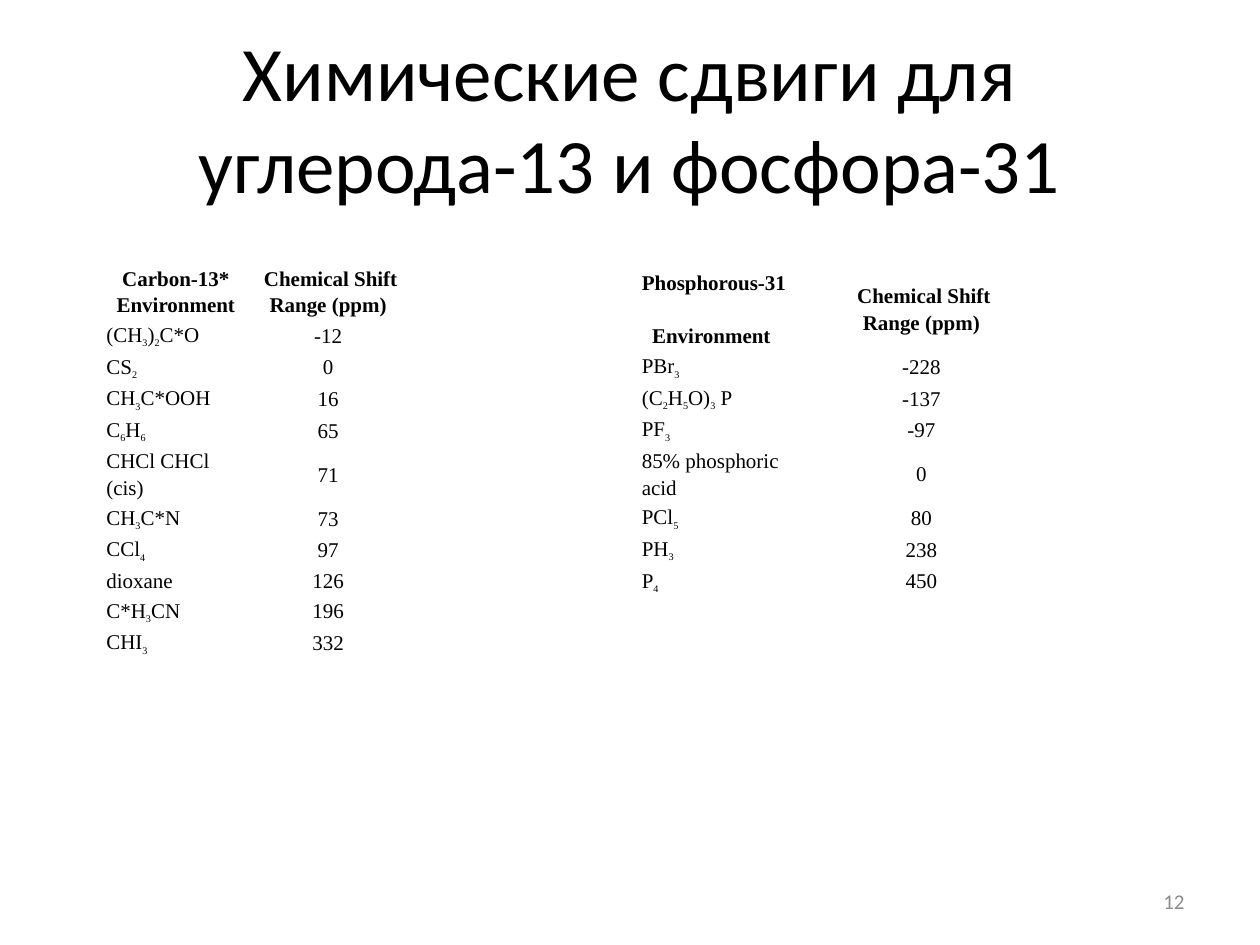
from dataclasses import dataclass

from pptx import Presentation
from pptx.dml.color import RGBColor
from pptx.enum.text import MSO_ANCHOR, PP_ALIGN
from pptx.util import Pt


@dataclass(frozen=True)
class Theme:
    text: RGBColor = RGBColor(0, 0, 0)
    muted: RGBColor = RGBColor(0x8C, 0x8C, 0x8C)
    heading_font: str = "Calibri"
    table_font: str = "Times New Roman"
    title_size: Pt = Pt(44)
    body_size: Pt = Pt(12)
    subscript_size: Pt = Pt(10)


THEME = Theme()
ROW_HEIGHT = 15
CELL_MARGIN = Pt(0.75)
SHIFT_HEADER = "Chemical Shift\vRange (ppm) "

CARBON_SHIFTS = [
    ("(CH_3)_2C*O", -12),
    ("CS_2 ", 0),
    ("CH_3C*OOH", 16),
    ("C_6H_6 ", 65),
    ("CHCl CHCl (cis)", 71),
    ("CH_3C*N", 73),
    ("CCl_4 ", 97),
    ("dioxane", 126),
    ("C*H_3CN", 196),
    ("CHI_3 ", 332),
]
PHOSPHORUS_SHIFTS = [
    ("PBr_3 ", -228),
    ("(C_2H_5O)_3 P", -137),
    ("PF_3 ", -97),
    ("85% phosphoric acid", 0),
    ("PCl_5 ", 80),
    ("PH_3 ", 238),
    ("P_4 ", 450),
]


def format_paragraph(paragraph, font, size, color, alignment, bold=False):
    paragraph.alignment = alignment
    paragraph.font.name = font
    paragraph.font.size = size
    paragraph.font.color.rgb = color
    paragraph.font.bold = bold


def add_formula(paragraph, formula):
    first, *rest = formula.split("_")
    paragraph.add_run().text = first
    for part in rest:
        subscript = paragraph.add_run()
        subscript.text = part[0]
        subscript.font.size = THEME.subscript_size
        subscript._r.get_or_add_rPr().set("baseline", "-25000")
        if part[1:]:
            paragraph.add_run().text = part[1:]


def format_cell(cell, alignment, bold=False):
    cell.fill.background()
    cell.vertical_anchor = MSO_ANCHOR.MIDDLE
    cell.margin_left = cell.margin_right = CELL_MARGIN
    cell.margin_top = cell.margin_bottom = CELL_MARGIN
    paragraph = cell.text_frame.paragraphs[0]
    paragraph.line_spacing = 1.15
    format_paragraph(paragraph, THEME.table_font, THEME.body_size, THEME.text, alignment, bold)
    return paragraph


def add_shift_table(slide, left, top, column_widths, header_height, header, shifts):
    height = header_height + ROW_HEIGHT * len(shifts)
    table = slide.shapes.add_table(
        len(shifts) + 1, 2, Pt(left), Pt(top), Pt(sum(column_widths)), Pt(height)
    ).table
    table.first_row = table.horz_banding = False
    for column, width in zip(table.columns, column_widths):
        column.width = Pt(width)
    for row in table.rows:
        row.height = Pt(ROW_HEIGHT)
    table.rows[0].height = Pt(header_height)
    for index, text in enumerate((header, SHIFT_HEADER)):
        format_cell(table.cell(0, index), PP_ALIGN.CENTER, bold=True).text = text
    for index, (environment, shift) in enumerate(shifts, start=1):
        add_formula(format_cell(table.cell(index, 0), PP_ALIGN.LEFT), environment)
        format_cell(table.cell(index, 1), PP_ALIGN.CENTER).text = f"{shift} "


def set_title(slide, text):
    title = slide.shapes.title
    title.left, title.top, title.width, title.height = Pt(36), Pt(21.6), Pt(648), Pt(90)
    title.text_frame.text = text
    title.text_frame.vertical_anchor = MSO_ANCHOR.MIDDLE
    format_paragraph(title.text_frame.paragraphs[0], THEME.heading_font,
                     THEME.title_size, THEME.text, PP_ALIGN.CENTER)


def add_page_number(slide, number):
    frame = slide.shapes.add_textbox(Pt(516), Pt(500.4), Pt(168), Pt(28.8)).text_frame
    frame.word_wrap = True
    frame.vertical_anchor = MSO_ANCHOR.MIDDLE
    frame.text = str(number)
    format_paragraph(frame.paragraphs[0], THEME.heading_font,
                     THEME.body_size, THEME.muted, PP_ALIGN.RIGHT)


def main():
    presentation = Presentation()
    presentation.slide_width, presentation.slide_height = Pt(720), Pt(540)
    slide = presentation.slides.add_slide(presentation.slide_layouts[5])
    set_title(slide, "Химические сдвиги для углерода-13 и фосфора-31")
    add_shift_table(slide, 60, 150, (84, 90), 30,
                    "Carbon-13* \vEnvironment ", CARBON_SHIFTS)
    add_shift_table(slide, 366, 152.5, (84, 156), 30,
                    "Phosphorous-31 \vEnvironment ", PHOSPHORUS_SHIFTS)
    add_page_number(slide, 12)
    presentation.save("out.pptx")


if __name__ == "__main__":
    main()
